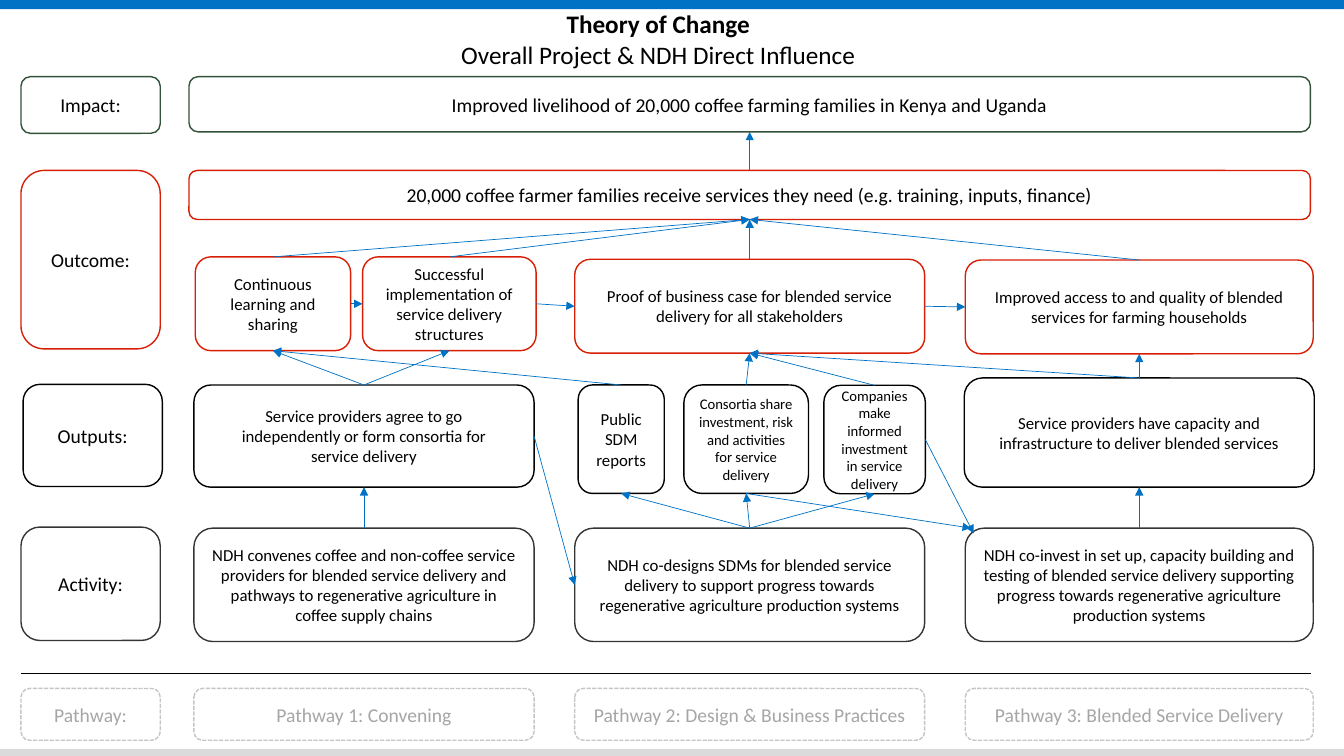
from lxml import etree
from pptx import Presentation
from pptx.dml.color import RGBColor
from pptx.enum.dml import MSO_LINE
from pptx.enum.shapes import MSO_CONNECTOR, MSO_SHAPE
from pptx.enum.text import MSO_ANCHOR, PP_ALIGN
from pptx.oxml.ns import qn
from pptx.util import Pt

SLIDE_WIDTH, SLIDE_HEIGHT = 960, 540
BLUE, GREY, WHITE, BLACK = "0072C6", "DBDBDB", "FFFFFF", "000000"
GREEN, RED, CHARCOAL, PALE, FADED = "325239", "D81E05", "343633", "C5C5C5", "A6A6A6"
TOP, LEFT, BOTTOM, RIGHT = range(4)

TITLE = ["Theory of Change", "Overall Project & NDH Direct Influence"]
BARS = [(0, 6.5, BLUE), (535, 5, GREY)]
COLUMNS = {
    "label": (15, 99.5),
    "outputs label": (16.5, 99.5),
    "full": (135, 801),
    "one": (138.5, 243),
    "two": (410.5, 250),
    "three": (689.5, 248.5),
    "capacity": (688.75, 250),
    "learning": (139.5, 111),
    "structures": (259, 124),
    "reports": (413, 61.5),
    "consortia": (488.5, 89),
    "companies": (588.5, 72.5),
}
# name: (text, column, top, height, text size, outline)
BOXES = {
    "impact label": ("Impact:", "label", 54.75, 40.5, 14, GREEN),
    "outcome label": ("Outcome:", "label", 121.75, 127.5, 14, RED),
    "outputs label": ("Outputs:", "outputs label", 274.5, 73, 14, BLACK),
    "activity label": ("Activity:", "label", 376.5, 81, 14, CHARCOAL),
    "pathway label": ("Pathway:", "label", 491.75, 37, 14, PALE),
    "impact": ("Improved livelihood of 20,000 coffee farming families in Kenya and Uganda",
               "full", 54.75, 39.5, 14, GREEN),
    "services": ("20,000 coffee farmer families receive services they need "
                 "(e.g. training, inputs, finance)", "full", 121.75, 35, 14, RED),
    "learning": ("Continuous learning and sharing", "learning", 183.5, 67, 12, RED),
    "structures": ("Successful implementation of service delivery structures",
                   "structures", 183.5, 67, 12, RED),
    "proof": ("Proof of business case for blended service delivery for all stakeholders",
              "two", 185.25, 67, 12, RED),
    "access": ("Improved access to and quality of blended services for farming households",
               "three", 185.75, 67, 12, RED),
    "agreement": ("Service providers agree to go independently or form consortia "
                  "for service delivery", "one", 275, 73, 12, BLACK),
    "reports": ("Public SDM reports", "reports", 275, 77.5, 12, BLACK),
    "consortia": ("Consortia share investment, risk and activities for service delivery",
                  "consortia", 275, 77.5, 10.5, BLACK),
    "companies": ("Companies make informed investment in service delivery",
                  "companies", 275.25, 77.5, 10.5, BLACK),
    "capacity": ("Service providers have capacity and infrastructure to deliver "
                 "blended services", "capacity", 270, 78, 12, BLACK),
    "convening": ("NDH convenes coffee and non-coffee service providers for blended service "
                  "delivery and pathways to regenerative agriculture in coffee supply chains",
                  "one", 377.25, 81, 12, CHARCOAL),
    "design": ("NDH co-designs SDMs for blended service delivery to support progress towards "
               "regenerative agriculture production systems", "two", 377.25, 81, 12, CHARCOAL),
    "investing": ("NDH co-invest in set up, capacity building and testing of blended service "
                  "delivery supporting progress towards regenerative agriculture production "
                  "systems", "three", 377.25, 81, 12, CHARCOAL),
    "pathway 1": ("Pathway 1: Convening", "one", 491.75, 37, 14, PALE),
    "pathway 2": ("Pathway 2: Design & Business Practices", "two", 491.75, 37, 14, PALE),
    "pathway 3": ("Pathway 3: Blended Service Delivery", "three", 491.75, 37, 14, PALE),
}
WIDE_MARGINS = {"agreement": 16}
UPWARD = [
    ("services", "impact"), ("learning", "services"), ("structures", "services"),
    ("proof", "services"), ("access", "services"), ("agreement", "learning"),
    ("agreement", "structures"), ("reports", "learning"), ("consortia", "proof"),
    ("companies", "proof"), ("capacity", "proof"), ("capacity", "access"),
    ("convening", "agreement"), ("design", "reports"), ("design", "consortia"),
    ("design", "companies"), ("investing", "capacity"),
]
SIDEWAYS = [("learning", "structures"), ("structures", "proof"), ("proof", "access"),
            ("agreement", "design")]
TO_CORNER = [("companies", RIGHT, (695.5, 381)), ("consortia", BOTTOM, (693.5, 377.25))]
DIVIDER = ((15, 481), (936.5, 481))


def color(value):
    """Turn a hex string into a colour."""
    return RGBColor.from_string(value)


def add_block(slide, kind, frame, fill, outline=None):
    """Draw a flat filled shape with an optional outline."""
    shape = slide.shapes.add_shape(kind, *(Pt(length) for length in frame))
    shape.shadow.inherit = False
    shape.fill.solid()
    shape.fill.fore_color.rgb = color(fill)
    if outline:
        shape.line.color.rgb = color(outline)
        shape.line.width = Pt(1)
    else:
        shape.line.fill.background()
    return shape


def write(shape, lines, size, ink, margin=7.2):
    """Write centred paragraphs into a shape."""
    frame = shape.text_frame
    frame.word_wrap = True
    frame.vertical_anchor = MSO_ANCHOR.MIDDLE
    frame.margin_left = frame.margin_right = Pt(margin)
    frame.text = "\n".join(lines)
    for paragraph in frame.paragraphs:
        paragraph.alignment = PP_ALIGN.CENTER
        paragraph.font.name = "Calibri"
        paragraph.font.size = Pt(size)
        paragraph.font.color.rgb = color(ink)


def add_box(slide, name):
    """Draw one named box of the diagram."""
    text, column, top, height, size, outline = BOXES[name]
    left, width = COLUMNS[column]
    shape = add_block(slide, MSO_SHAPE.ROUNDED_RECTANGLE, (left, top, width, height),
                      WHITE, outline)
    if outline == PALE:
        shape.line.dash_style = MSO_LINE.SQUARE_DOT
    write(shape, [text], size, FADED if outline == PALE else BLACK,
          WIDE_MARGINS.get(name, 7.2))
    return shape


def side_middle(name, side):
    """Return the middle of one side of a named box."""
    _, column, top, height, _, _ = BOXES[name]
    left, width = COLUMNS[column]
    across, down = [(0.5, 0), (0, 0.5), (0.5, 1), (1, 0.5)][side]
    return left + width * across, top + height * down


def add_line(slide, start, end, ink):
    """Draw a thin straight line."""
    line = slide.shapes.add_connector(MSO_CONNECTOR.STRAIGHT,
                                      *(Pt(length) for length in start + end))
    line.line.color.rgb = color(ink)
    line.line.width = Pt(0.5)
    etree.SubElement(line._element.spPr, qn("a:effectLst"))
    return line


def add_arrow(slide, shapes, source, side, target=None, target_side=None, point=None):
    """Draw an arrow from a box side to another box side or to a free point."""
    end = point or side_middle(target, target_side)
    arrow = add_line(slide, side_middle(source, side), end, BLUE)
    etree.SubElement(arrow.line._get_or_add_ln(), qn("a:tailEnd"), type="triangle")
    arrow.begin_connect(shapes[source], side)
    if target:
        arrow.end_connect(shapes[target], target_side)


def main():
    """Build the theory of change slide."""
    presentation = Presentation()
    presentation.slide_width, presentation.slide_height = Pt(SLIDE_WIDTH), Pt(SLIDE_HEIGHT)
    slide = presentation.slides.add_slide(presentation.slide_layouts[6])
    for top, height, fill in BARS:
        add_block(slide, MSO_SHAPE.RECTANGLE, (0, top, SLIDE_WIDTH, height), fill)
    title = add_block(slide, MSO_SHAPE.ROUNDED_RECTANGLE, (268, 8, 404.5, 39.5), WHITE)
    write(title, TITLE, 18, BLACK)
    title.text_frame.paragraphs[0].font.bold = True
    shapes = {name: add_box(slide, name) for name in BOXES}
    for source, target in UPWARD:
        add_arrow(slide, shapes, source, TOP, target, BOTTOM)
    for source, target in SIDEWAYS:
        add_arrow(slide, shapes, source, RIGHT, target, LEFT)
    for source, side, point in TO_CORNER:
        add_arrow(slide, shapes, source, side, point=point)
    add_line(slide, *DIVIDER, BLACK)
    presentation.save("out.pptx")


if __name__ == "__main__":
    main()
